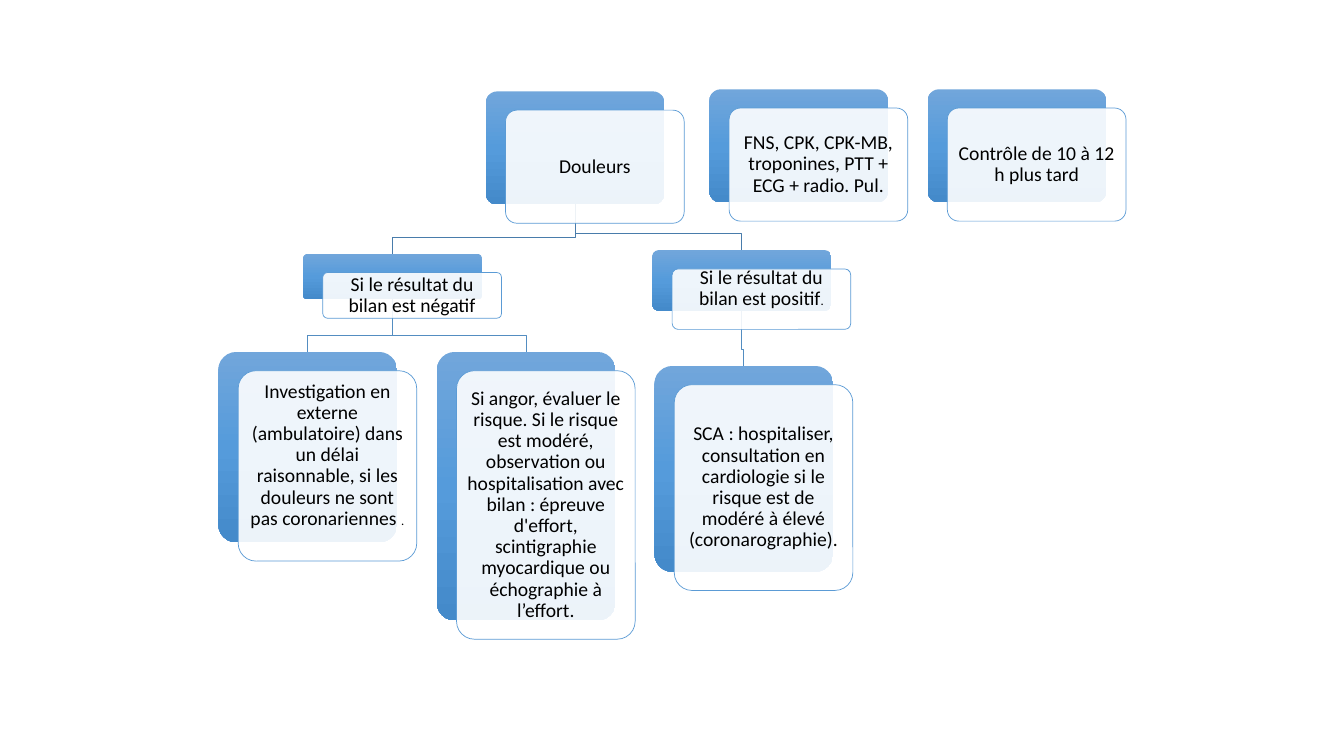
"""Builds a slide with a decision tree for the work-up of chest pain."""
from copy import deepcopy

from pptx import Presentation
from pptx.dml.color import RGBColor
from pptx.enum.shapes import MSO_SHAPE
from pptx.enum.text import MSO_ANCHOR, PP_ALIGN
from pptx.oxml.ns import qn
from pptx.util import Pt
from lxml.etree import SubElement

BLUE_LIGHT = RGBColor(0x71, 0xA6, 0xDB)
BLUE_MIDDLE = RGBColor(0x55, 0x9B, 0xDB)
BLUE_DARK = RGBColor(0x44, 0x8A, 0xCA)
OUTLINE = RGBColor(0x5B, 0x9B, 0xD5)
LINK_UPPER = RGBColor(0x49, 0x7C, 0xAB)
LINK_LOWER = RGBColor(0x53, 0x8D, 0xC1)
WHITE = RGBColor(0xFF, 0xFF, 0xFF)
BLACK = RGBColor(0, 0, 0)

CARD_WIDTH = 127.6
OFFSET_X, OFFSET_Y = 14.1, 13.4
BEND = 11.7
INSET = 4

# name: left, top, height, extra bottom inset, runs
CARDS = {
    "douleurs": (347, 65.3, 80.8, 0, [("Douleurs", 14)]),
    "négatif": (216.5, 181.3, 32.6, 0, [("Si le résultat du bilan est négatif", 14)]),
    "externe": (156, 251.4, 136, 15, [
        ("Investigation en externe (ambulatoire) dans un délai raisonnable, "
         "si les douleurs ne sont pas coronariennes ", 14), (".", 9)]),
    "angor": (312, 251.4, 191.8, 0, [
        ("Si angor, évaluer le risque. Si le risque est modéré, observation ou "
         "hospitalisation avec bilan : épreuve d'effort, scintigraphie "
         "myocardique ou échographie à l’effort.", 14)]),
    "positif": (466, 178.7, 43.2, 15, [
        ("Si le résultat du bilan est positif", 14), (".", 9)]),
    "SCA": (467.5, 261.4, 147, 0, [
        ("SCA : hospitaliser, consultation en cardiologie si le risque est de "
         "modéré à élevé (coronarographie).", 14)]),
    "examens": (506.7, 63.8, 80.8, 0, [
        ("FNS, CPK, CPK-MB, troponines, PTT + ECG + radio. Pul.", 14)]),
    "contrôle": (662.6, 63.8, 80.8, 0, [("Contrôle de 10 à 12 h plus tard", 14)]),
}
LINKS = [
    ("positif", "SCA", LINK_LOWER),
    ("douleurs", "positif", LINK_UPPER),
    ("négatif", "angor", LINK_LOWER),
    ("négatif", "externe", LINK_LOWER),
    ("douleurs", "négatif", LINK_UPPER),
]

deck = Presentation()
deck.slide_width, deck.slide_height = Pt(960), Pt(540)
page = deck.slides.add_slide(deck.slide_layouts[6])


def add_card(left, top, height):
    card = page.shapes.add_shape(
        MSO_SHAPE.ROUNDED_RECTANGLE, Pt(left), Pt(top), Pt(CARD_WIDTH), Pt(height))
    card.adjustments[0] = 0.1
    card.shadow.inherit = False
    return card


for parent, child, colour in LINKS:
    parent_left, parent_top, parent_height = CARDS[parent][:3]
    child_left, child_top = CARDS[child][:2]
    start_x, end_x = parent_left + CARD_WIDTH / 2, child_left + CARD_WIDTH / 2
    bend_y = child_top - BEND
    builder = page.shapes.build_freeform(Pt(start_x), Pt(parent_top + parent_height))
    corners = [(start_x, bend_y), (end_x, bend_y), (end_x, child_top)]
    builder.add_line_segments([(Pt(x), Pt(y)) for x, y in corners], close=False)
    link = builder.convert_to_shape()
    link.shadow.inherit = False
    link.fill.background()
    link.line.color.rgb = colour
    link.line.width = Pt(0.5)

for left, top, height, extra_bottom, runs in CARDS.values():
    back = add_card(left, top, height)
    back.line.fill.background()
    back.fill.gradient()
    back.fill.gradient_angle = 270
    first, last = back.fill.gradient_stops
    first.color.rgb = BLUE_LIGHT
    last.color.rgb = BLUE_DARK
    first_stop = next(back._element.iter(qn("a:gs")))
    middle_stop = deepcopy(first_stop)
    middle_stop.set("pos", "50000")
    first_stop.addnext(middle_stop)
    back.fill.gradient_stops[1].color.rgb = BLUE_MIDDLE

    front = add_card(left + OFFSET_X, top + OFFSET_Y, height)
    front.fill.solid()
    front.fill.fore_color.rgb = WHITE
    white = next(front._element.spPr.iter(qn("a:srgbClr")))
    SubElement(white, qn("a:alpha"), val="90000")
    front.line.color.rgb = OUTLINE
    front.line.width = Pt(0.5)

    box = front.text_frame
    box.word_wrap = True
    box.vertical_anchor = MSO_ANCHOR.MIDDLE
    box.margin_left = box.margin_right = box.margin_top = Pt(INSET)
    box.margin_bottom = Pt(INSET + extra_bottom)
    para = box.paragraphs[0]
    para.alignment = PP_ALIGN.CENTER
    para.line_spacing = 0.9
    for text, size in runs:
        span = para.add_run()
        span.text = text
        span.font.name = "Calibri"
        span.font.size = Pt(size)
        span.font.color.rgb = BLACK

deck.save("out.pptx")
